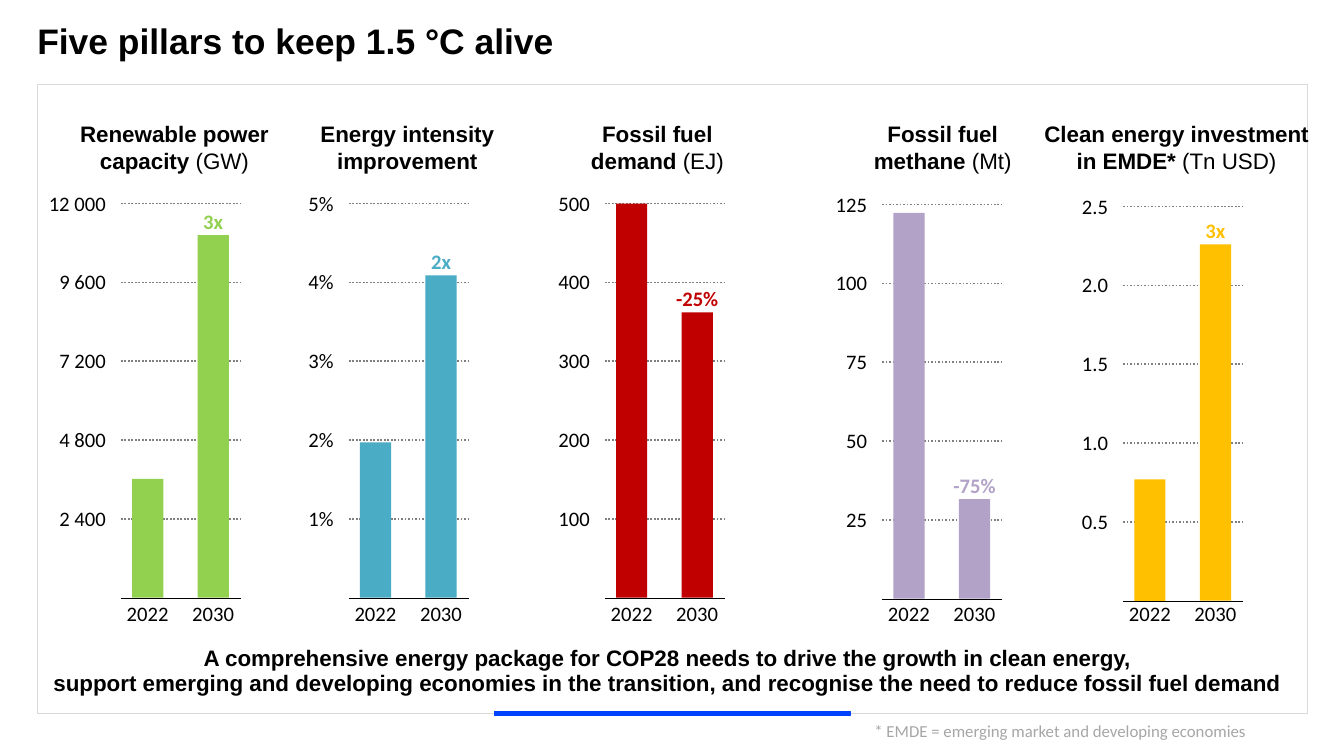
from typing import NamedTuple

from lxml.etree import SubElement
from pptx import Presentation
from pptx.dml.color import RGBColor
from pptx.enum.dml import MSO_LINE
from pptx.enum.shapes import MSO_CONNECTOR, MSO_SHAPE
from pptx.enum.text import MSO_ANCHOR, PP_ALIGN
from pptx.oxml.ns import qn
from pptx.util import Inches, Pt

BLACK = RGBColor(0x00, 0x00, 0x00)
FRAME = RGBColor(0xD9, 0xD9, 0xD9)
BLUE = RGBColor(0x00, 0x44, 0xFF)
GRID = RGBColor(0x7F, 0x7F, 0x7F)
NOTE = RGBColor(0xA6, 0xA6, 0xA6)
GREEN = RGBColor(0x92, 0xD0, 0x50)
TEAL = RGBColor(0x4B, 0xAC, 0xC6)
RED = RGBColor(0xC0, 0x00, 0x00)
MAUVE = RGBColor(0xB3, 0xA2, 0xC7)
GOLD = RGBColor(0xFF, 0xC0, 0x00)

PLOT_W, PLOT_H = 1.19, 3.91
BAR_W, BAR_IN, BAR_STEP = 0.31, 0.11, 0.65
YEARS = ("2022", "2030")


class Run(NamedTuple):
    text: str
    bold: bool = True


class Font(NamedTuple):
    name: str
    size: float
    color: RGBColor = BLACK


class Box(NamedTuple):
    left: float
    top: float
    width: float
    height: float


class Pillar(NamedTuple):
    head: list[list[Run]]
    head_x: float
    head_w: float
    left: float
    top: float
    ticks: tuple[str, ...]  # from the lowest to the highest
    peak: float
    values: tuple[float, float]
    change: str
    color: RGBColor


PILLARS = [
    Pillar([[Run("Renewable power capacity "), Run("(GW)", False)]], 0.54, 2.38, 1.2, 2.02,
           ("2 400", "4 800", "7 200", "9 600", "12 000"), 12000, (3620, 11040), "3x", GREEN),
    Pillar([[Run("Energy intensity improvement")]], 3.03, 2.02, 3.46, 2.02,
           ("1%", "2%", "3%", "4%", "5%"), 5, (1.97, 4.09), "2x", TEAL),
    Pillar([[Run("Fossil fuel")], [Run("demand "), Run("(EJ)", False)]], 5.33, 2.38, 6, 2.02,
           ("100", "200", "300", "400", "500"), 500, (500, 362), "-25%", RED),
    Pillar([[Run("Fossil fuel")], [Run("methane"), Run(" (Mt)", False)]], 8.16, 2.38, 8.75, 2.03,
           ("25", "50", "75", "100", "125"), 125, (122.4, 31.6), "-75%", MAUVE),
    Pillar([[Run("Clean energy investment in EMDE* "), Run("(Tn USD)", False)]], 10.25, 2.84,
           11.14, 2.05, ("0.5", "1.0", "1.5", "2.0", "2.5"), 2.5, (0.77, 2.26), "3x", GOLD),
]

HEAD = Font("Arial", 16)
LABEL = Font("Calibri", 14.7)

deck = Presentation()
deck.slide_width, deck.slide_height = Inches(13.33), Inches(7.5)
slide = deck.slides.add_slide(deck.slide_layouts[6])
shapes = slide.shapes


def add_text(box: Box, lines: list[list[Run]], font: Font, align: PP_ALIGN = PP_ALIGN.CENTER,
             space: float = 1.0, pad: tuple[float, float] = (0, 0),
             anchor: MSO_ANCHOR = MSO_ANCHOR.TOP) -> None:
    """Pad gives the right and bottom insets."""
    frame = shapes.add_textbox(*map(Inches, box)).text_frame
    frame.word_wrap = True
    frame.margin_left = frame.margin_top = 0
    frame.margin_right, frame.margin_bottom = map(Inches, pad)
    frame.vertical_anchor = anchor
    for i, line in enumerate(lines):
        para = frame.add_paragraph() if i else frame.paragraphs[0]
        para.alignment, para.line_spacing = align, space
        for part in line:
            run = para.add_run()
            run.text = part.text
            run.font.name, run.font.size = font.name, Pt(font.size)
            run.font.bold, run.font.color.rgb = part.bold, font.color


def add_rect(box: Box, fill: RGBColor | None = None, line: RGBColor | None = None,
             weight: float = 0.75) -> None:
    rect = shapes.add_shape(MSO_SHAPE.RECTANGLE, *map(Inches, box))
    rect.shadow.inherit = False
    if fill is None:
        rect.fill.background()
    else:
        rect.fill.solid()
        rect.fill.fore_color.rgb = fill
    if line is None:
        rect.line.fill.background()
    else:
        rect.line.color.rgb, rect.line.width = line, Pt(weight)


def add_rule(left: float, y: float, color: RGBColor, weight: float,
             dash: MSO_LINE | None = None) -> None:
    """Draw a level line across one plot."""
    rule = shapes.add_connector(MSO_CONNECTOR.STRAIGHT, Inches(left), Inches(y),
                                Inches(left + PLOT_W), Inches(y))
    rule.line.color.rgb, rule.line.width = color, Pt(weight)
    if dash is not None:
        rule.line.dash_style = dash
    SubElement(rule._element.spPr, qn("a:effectLst"))


def add_pillar(pillar: Pillar) -> None:
    left, base = pillar.left, pillar.top + PLOT_H
    add_text(Box(pillar.head_x, 1.19, pillar.head_w, 0.41), pillar.head, HEAD)
    for i, tick in enumerate(pillar.ticks, 1):
        y = base - PLOT_H * i / len(pillar.ticks)
        add_rule(left, y, GRID, 1.25, MSO_LINE.ROUND_DOT)
        add_text(Box(left - 0.85, y - 0.13, 0.7, 0.25), [[Run(tick, False)]], LABEL,
                 PP_ALIGN.RIGHT)
    for i, (year, value) in enumerate(zip(YEARS, pillar.values)):
        tall = PLOT_H * value / pillar.peak
        x = left + BAR_IN + i * BAR_STEP
        add_rect(Box(x, base - tall, BAR_W, tall), pillar.color)
        add_text(Box(x - 0.06, 5.96, 0.43, 0.25), [[Run(year, False)]], LABEL)
    add_text(Box(x - 0.15, base - tall - 0.26, BAR_W + 0.3, 0.25), [[Run(pillar.change)]],
             LABEL._replace(color=pillar.color))
    add_rule(left, base, BLACK, 0.25)


add_rect(Box(0.37, 0.84, 12.6, 6.24), line=FRAME)
add_rect(Box(4.9, 7.06, 3.53, 0.04), BLUE, BLUE, 0.5)
add_text(Box(0.37, 0.24, 11.66, 0.57), [[Run("Five pillars to keep 1.5 °C alive")]],
         Font("Arial", 25.3), PP_ALIGN.LEFT, 0.9)
for pillar in PILLARS:
    add_pillar(pillar)
add_text(Box(0.37, 6.39, 12.6, 0.63), [
    [Run("A comprehensive energy package for COP28 needs to drive the growth in clean energy,")],
    [Run("support emerging and developing economies in the transition, "
         "and recognise the need to reduce fossil fuel demand")],
], HEAD, space=0.9, pad=(0.1, 0.08), anchor=MSO_ANCHOR.MIDDLE)
add_text(Box(7.24, 7.15, 5.12, 0.18),
         [[Run("* EMDE = emerging market and developing economies", False)]],
         Font("Calibri", 12, NOTE), PP_ALIGN.RIGHT)

deck.save("out.pptx")
